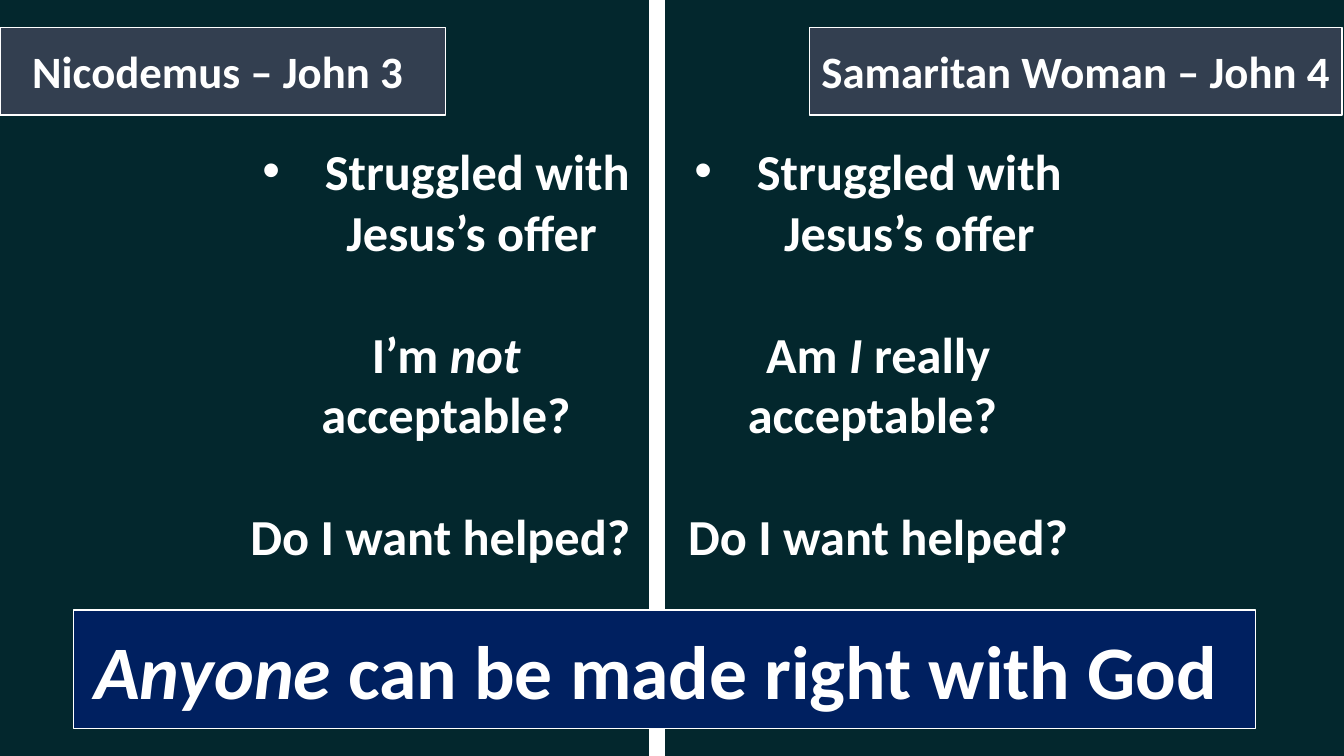
from lxml.etree import SubElement
from pptx import Presentation
from pptx.dml.color import RGBColor
from pptx.enum.shapes import MSO_SHAPE
from pptx.enum.text import MSO_ANCHOR, MSO_AUTO_SIZE, PP_ALIGN
from pptx.oxml.ns import qn
from pptx.util import Inches, Pt

COLORS = {"background": "03272D", "header": "333F50", "banner": "002060", "white": "FFFFFF"}
FONT = "Calibri"
COLUMNS = [
    {
        "header": "Nicodemus – John 3 ",
        "points": [
            [("Struggled with Jesus’s offer ", False)],
            [("I’m ", False), ("not", True), (" acceptable?", False)],
            [("Do I want helped? ", False)],
        ],
    },
    {
        "header": "Samaritan Woman – John 4 ",
        "points": [
            [("Struggled with Jesus’s offer", False)],
            [("Am ", False), ("I", True), (" really acceptable? ", False)],
            [("Do I want helped?", False)],
        ],
    },
]
BANNER = [("Anyone", True), (" can be made right with God ", False)]

WIDTH, HEIGHT = 13.33, 7.5
HEADER_TOP, HEADER_HEIGHT = 0.27, 0.87
HEADER_SPANS = [(0, 4.42), (8.03, 5.28)]
POINTS_TOP = 1.34
POINTS_SPANS = [(2.35, 4.15), (6.59, 4.24)]
DIVIDER_WIDTH = 0.15
DIVIDER_LEFT = POINTS_SPANS[1][0] - DIVIDER_WIDTH
BANNER_BOX = (0.73, 6.05, 11.72, 1.18)
BULLET_INDENT = 0.62
POINT_GAP = 44


def color(name):
    return RGBColor.from_string(COLORS[name])


def paint(shape, fill, outlined):
    shape.fill.solid()
    shape.fill.fore_color.rgb = color(fill)
    if outlined:
        shape.line.color.rgb = color("white")
        shape.line.width = Pt(1)


def place(shape, box, fill, outlined=True, preset="rect"):
    shape.left, shape.top, shape.width, shape.height = map(Inches, box)
    geometry = SubElement(shape.element.spPr, qn("a:prstGeom"), prst=preset)
    SubElement(geometry, qn("a:avLst"))
    paint(shape, fill, outlined)
    tree = shape.element.getparent()
    tree.append(shape.element)


def write(shape, paragraphs, size, anchor, bulleted=False):
    frame = shape.text_frame
    frame.text = "\n".join("".join(text for text, _ in runs) for runs in paragraphs)
    frame.word_wrap = True
    frame.auto_size = MSO_AUTO_SIZE.NONE
    frame.vertical_anchor = anchor
    for index, (paragraph, runs) in enumerate(zip(frame.paragraphs, paragraphs)):
        has_bullet = bulleted and index == 0
        indent = Inches(BULLET_INDENT) if has_bullet else 0
        paragraph.alignment = PP_ALIGN.CENTER
        paragraph.line_spacing = 1.0
        paragraph.space_before = Pt(POINT_GAP if index else 0)
        properties = paragraph._p.get_or_add_pPr()
        properties.set("marL", str(indent))
        properties.set("indent", str(-indent))
        if has_bullet:
            SubElement(properties, qn("a:buFont"), typeface="Arial")
            SubElement(properties, qn("a:buChar"), char="•")
        else:
            SubElement(properties, qn("a:buNone"))
        paragraph.runs[0].text = runs[0][0]
        for text, _ in runs[1:]:
            paragraph.add_run().text = text
        for run, (_, italic) in zip(paragraph.runs, runs):
            run.font.name = FONT
            run.font.size = Pt(size)
            run.font.bold = True
            run.font.italic = italic
            run.font.color.rgb = color("white")


def main():
    presentation = Presentation()
    presentation.slide_width, presentation.slide_height = Inches(WIDTH), Inches(HEIGHT)
    slide = presentation.slides.add_slide(presentation.slide_layouts.get_by_name("Comparison"))
    slide.background.fill.solid()
    slide.background.fill.fore_color.rgb = color("background")
    title, *bodies = slide.placeholders

    for column, header, points, header_span, points_span in zip(
        COLUMNS, bodies[::2], bodies[1::2], HEADER_SPANS, POINTS_SPANS
    ):
        left, width = points_span
        place(points, (left, POINTS_TOP, width, HEIGHT - POINTS_TOP), "background", outlined=False)
        write(points, column["points"], 36, MSO_ANCHOR.TOP, bulleted=True)
        left, width = header_span
        place(header, (left, HEADER_TOP, width, HEADER_HEIGHT), "header")
        write(header, [[(column["header"], False)]], 32, MSO_ANCHOR.MIDDLE)

    divider = slide.shapes.add_shape(
        MSO_SHAPE.RECTANGLE, *map(Inches, (DIVIDER_LEFT, 0, DIVIDER_WIDTH, HEIGHT))
    )
    divider.shadow.inherit = False
    paint(divider, "white", True)

    place(title, BANNER_BOX, "banner", preset="roundRect")
    write(title, [BANNER], 54, MSO_ANCHOR.MIDDLE)
    presentation.save("out.pptx")


if __name__ == "__main__":
    main()
